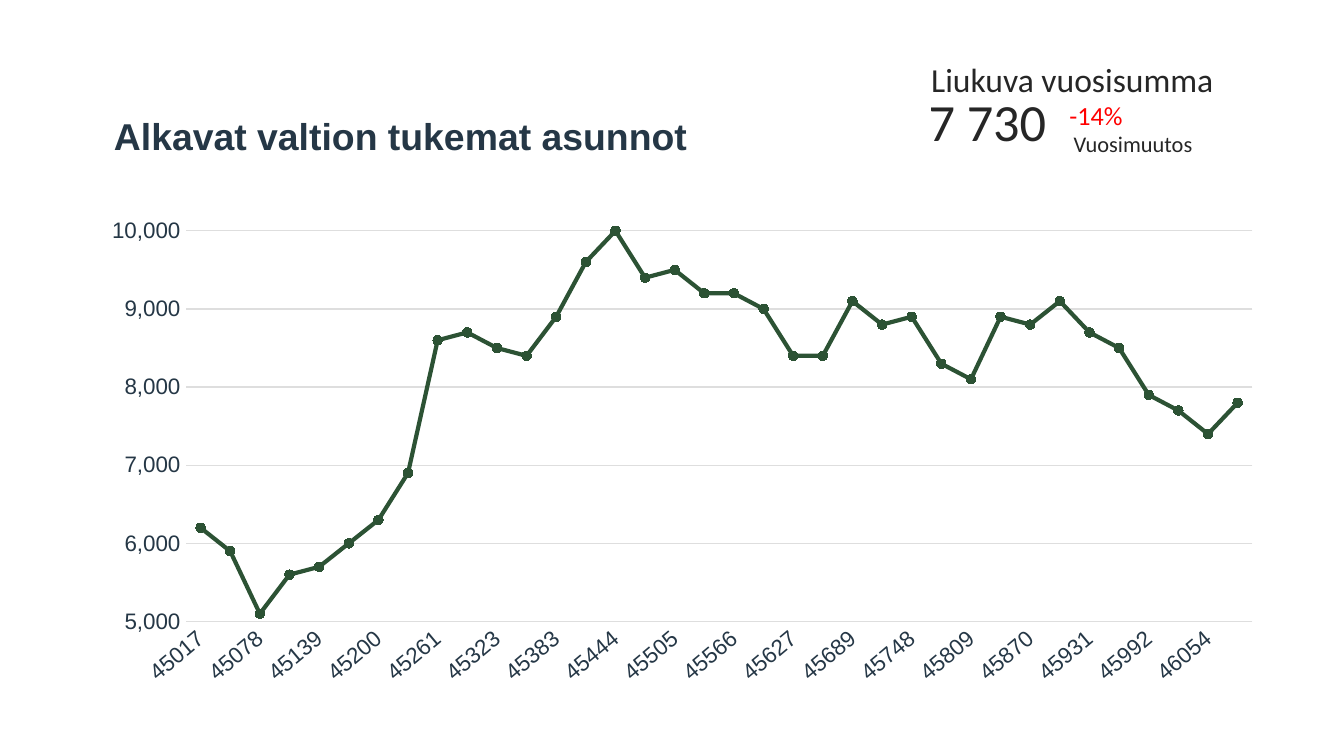
from lxml import etree
from pptx import Presentation
from pptx.chart.data import CategoryChartData
from pptx.dml.color import RGBColor
from pptx.enum.chart import XL_CHART_TYPE, XL_MARKER_STYLE, XL_TICK_MARK
from pptx.enum.text import MSO_ANCHOR, PP_ALIGN
from pptx.oxml.ns import qn
from pptx.util import Cm, Pt

LINE = XL_CHART_TYPE.LINE_MARKERS
DOT = XL_MARKER_STYLE.CIRCLE
NO_TICK = XL_TICK_MARK.NONE
TOP, MID, LOW = MSO_ANCHOR.TOP, MSO_ANCHOR.MIDDLE, MSO_ANCHOR.BOTTOM
LEFT = PP_ALIGN.LEFT

NAVY, DARK, RED, GREEN, GRAY = "253746", "262626", "FF0000", "2C5234", "DEDEDE"

# Content
TITLE = "Alkavat valtion tukemat asunnot"
# text, (left, top, width, height) in cm, size, colour, anchor
NOTES = [
    ("Vuosimuutos", (20.04, 2.34, 3.2, 0.76), 12, DARK, TOP),
    ("Liukuva vuosisumma", (17.35, 0.99, 6.15, 1.02), 18, DARK, TOP),
    ("-14%", (19.96, 1.75, 4.14, 0.84), 14, RED, LOW),
    ("7 730", (17.3, 1.55, 5.59, 1.45), 28, DARK, LOW),
]
MONTHS = [
    45017, 45047, 45078, 45108, 45139, 45170, 45200, 45231, 45261,
    45292, 45323, 45352, 45383, 45413, 45444, 45474, 45505, 45536,
    45566, 45597, 45627, 45658, 45689, 45717, 45748, 45778, 45809,
    45839, 45870, 45901, 45931, 45962, 45992, 46023, 46054, 46082,
]
SUMS = [
    6200, 5900, 5100, 5600, 5700, 6000, 6300, 6900, 8600,
    8700, 8500, 8400, 8900, 9600, 10000, 9400, 9500, 9200,
    9200, 9000, 8400, 8400, 9100, 8800, 8900, 8300, 8100,
    8900, 8800, 9100, 8700, 8500, 7900, 7700, 7400, 7800,
]
# Plot area as shares of the chart frame
PLOT = {"x": 0.08, "y": 0.03, "w": 0.9, "h": 0.82}
TILT = -40  # degrees, month labels


def color(code):
    return RGBColor.from_string(code)


def style(font, name, size, code, bold=False):
    font.name, font.size, font.bold = name, Pt(size), bold
    font.color.rgb = color(code)


def write(shape, text, anchor, *look):
    frame = shape.text_frame
    frame.text = text
    frame.word_wrap = True
    frame.vertical_anchor = anchor
    para = frame.paragraphs[0]
    para.alignment = LEFT
    style(para.runs[0].font, *look)


def fix_plot(chart):
    area = chart.element.find(".//" + qn("c:plotArea"))
    for old in area.findall(qn("c:layout")):
        area.remove(old)
    lay = etree.Element(qn("c:layout"))
    area.insert(0, lay)
    man = etree.SubElement(lay, qn("c:manualLayout"))
    rules = {"layoutTarget": "inner", "xMode": "edge", "yMode": "edge", **PLOT}
    for tag, val in rules.items():
        etree.SubElement(man, qn("c:" + tag)).set("val", str(val))


def tilt_months(chart):
    axis = chart.element.find(".//" + qn("c:catAx"))
    body = axis.find(qn("c:txPr")).find(qn("a:bodyPr"))
    body.set("rot", str(TILT * 60000))
    body.set("vert", "horz")


deck = Presentation()
deck.slide_width, deck.slide_height = Cm(25.4), Cm(14.29)
slide = deck.slides.add_slide(deck.slide_layouts[5])

# Title
head = slide.shapes.title
head.left, head.top, head.width, head.height = map(Cm, (1.9, 2.07, 13.21, 0.97))
write(head, TITLE, MID, "Arial", 20, NAVY, True)

# Line chart
data = CategoryChartData(number_format="#,##0")
data.categories = [str(m) for m in MONTHS]
data.add_series("Series 1", SUMS)
frame = slide.shapes.add_chart(LINE, *map(Cm, (1.72, 3.94, 22.4, 9.19)), data)
chart = frame.chart
chart.has_title = chart.has_legend = False
style(chart.font, "DejaVu Sans", 10, DARK)
fix_plot(chart)

plot = chart.plots[0]
plot.vary_by_categories = False
line = plot.series[0]
line.smooth = False
line.format.line.width = Pt(2.25)
line.format.line.color.rgb = color(GREEN)
line.marker.style, line.marker.size = DOT, 5
mark = line.marker.format
mark.fill.solid()
mark.fill.fore_color.rgb = mark.line.color.rgb = color(GREEN)

# Axes
months, sums = chart.category_axis, chart.value_axis
for axis in (months, sums):
    axis.major_tick_mark = axis.minor_tick_mark = NO_TICK
    axis.format.line.fill.background()
    style(axis.tick_labels.font, "Arial", 12, NAVY)
tilt_months(chart)
sums.minimum_scale, sums.maximum_scale, sums.major_unit = 5000, 10100, 1000
sums.tick_labels.number_format = "#,##0"
sums.tick_labels.number_format_is_linked = False
sums.has_major_gridlines = True
grid = sums.major_gridlines.format.line
grid.width, grid.color.rgb = Pt(0.75), color(GRAY)

# Key figures
for text, place, size, code, anchor in NOTES:
    box = slide.shapes.add_textbox(*map(Cm, place))
    write(box, text, anchor, "Calibri", size, code)

deck.save("out.pptx")
